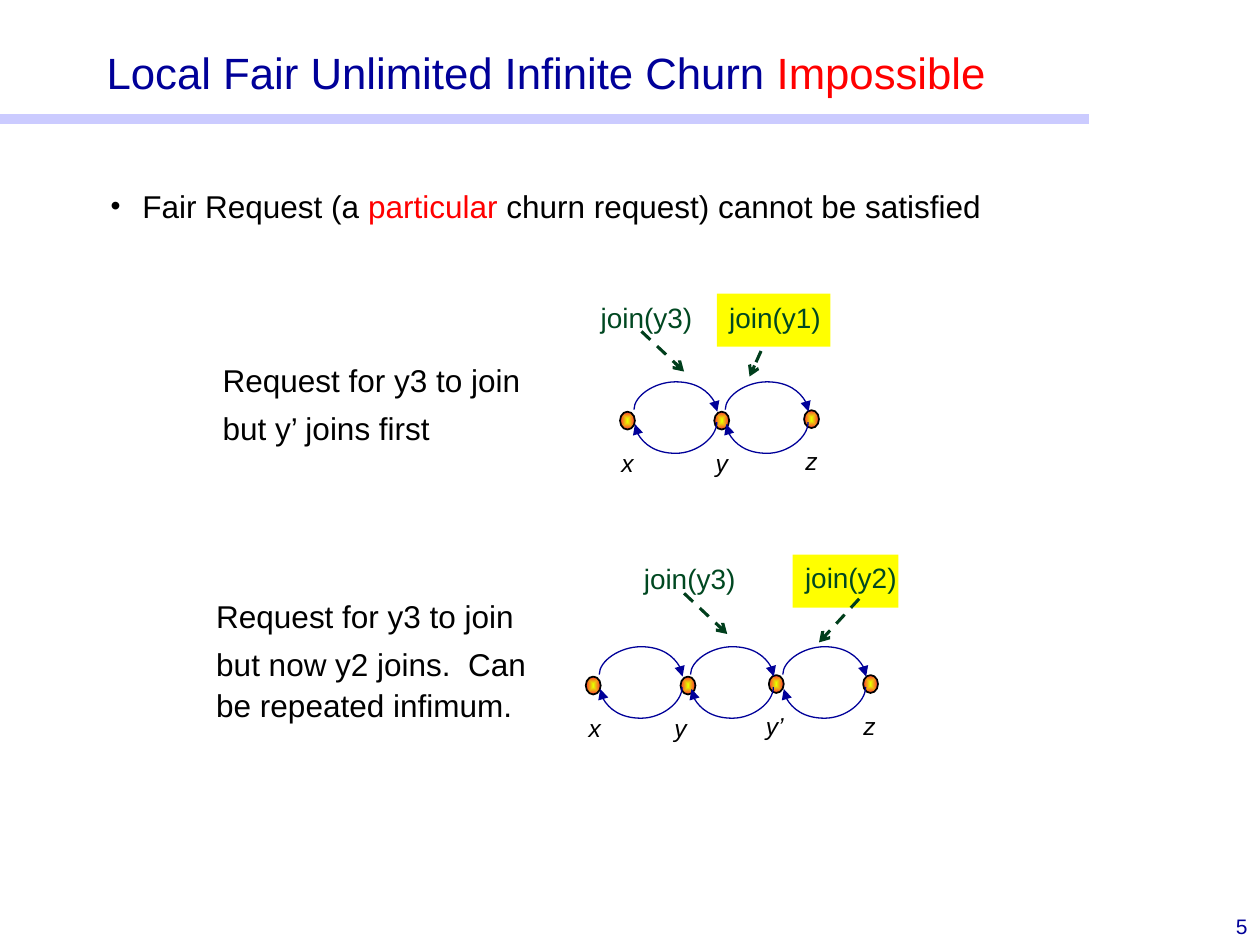
"""Build the slide on why local fair unlimited infinite churn is impossible."""
import pptx
import pptx.dml.color
import pptx.enum.dml
import pptx.enum.shapes
import pptx.enum.text
import pptx.oxml
import pptx.oxml.ns
import pptx.util

HUES = {"navy": "000099", "red": "FF0000", "black": "000000", "green": "004821",
        "dark": "003E1C", "yellow": "FFFF00", "lime": "E6FF00", "coral": "FF3333",
        "bar": "9999FF"}


def say(text, at, box=None, size=18, hue="black", red="", fill=None, align="LEFT",
        anchor="TOP", italic=False, wrap=True, lead=1.0, gap=0, inset=0.13, bullet=False):
    place = [pptx.util.Cm(n) for n in at]
    box = box or slide.shapes.add_textbox(*place)
    box.left, box.top, box.width, box.height = place
    if fill:
        box.fill.solid()
        box.fill.fore_color.rgb = pptx.dml.color.RGBColor.from_string(HUES[fill])
    frame = box.text_frame
    frame.auto_size = pptx.enum.text.MSO_AUTO_SIZE.NONE
    frame.word_wrap = wrap
    frame.vertical_anchor = pptx.enum.text.MSO_ANCHOR[anchor]
    frame.margin_left = frame.margin_right = pptx.util.Cm(0.25)
    frame.margin_top = pptx.util.Cm(inset)
    frame.margin_bottom = pptx.util.Cm(0.13)
    for i, line in enumerate(text.split("\n")):
        para = frame.add_paragraph() if i else frame.paragraphs[0]
        if bullet:
            props = para._p.get_or_add_pPr()
            props.set("marL", str(pptx.util.Cm(0.64)))
            props.set("indent", str(-pptx.util.Cm(0.64)))
            for mark in (f'buClr {ns}><a:srgbClr val="{HUES[hue]}"/></a:buClr',
                         f'buSzPct {ns} val="90000"/', f'buFont {ns} typeface="Arial"/',
                         f'buChar {ns} char="•"/'):
                props.append(pptx.oxml.parse_xml(f"<a:{mark}>"))
        para.alignment = pptx.enum.text.PP_ALIGN[align]
        para.line_spacing = lead
        if i:
            para.space_before = pptx.util.Pt(gap)
        parts = line.partition(red) if red else (line,)
        for part in filter(None, parts):
            run = para.add_run()
            run.text = part
            run.font.name = "Arial"
            run.font.size = pptx.util.Pt(size)
            run.font.italic = italic
            tint = "red" if part == red else hue
            run.font.color.rgb = pptx.dml.color.RGBColor.from_string(HUES[tint])


def link(kind, ends, hue, width, tip, dash=None):
    line = slide.shapes.add_connector(pptx.enum.shapes.MSO_CONNECTOR[kind],
                                      *[pptx.util.Cm(n) for n in ends])
    line.line.color.rgb = pptx.dml.color.RGBColor.from_string(HUES[hue])
    line.line.width = pptx.util.Pt(width)
    line.line.dash_style = dash
    line.line._get_or_add_ln().append(pptx.oxml.parse_xml(f"<a:{tip[0]} {ns} type='{tip[1]}'/>"))
    line._element.spPr.append(pptx.oxml.parse_xml(f"<a:effectLst {ns}/>"))
    return line


ns = pptx.oxml.ns.nsdecls("a")
deck = pptx.Presentation()
deck.slide_width, deck.slide_height = pptx.util.Cm(25.4), pptx.util.Cm(19.05)
slide = deck.slides.add_slide(deck.slide_layouts[5])

bar = slide.shapes.add_shape(pptx.enum.shapes.MSO_SHAPE.RECTANGLE, 0, pptx.util.Cm(2.3),
                             pptx.util.Cm(21.95), pptx.util.Cm(0.2))
bar.shadow.inherit = False
bar.line.fill.background()
bar.fill.solid()
bar.fill.fore_color.rgb = pptx.dml.color.RGBColor.from_string(HUES["bar"])
tone = bar._element.spPr.find(".//" + pptx.oxml.ns.qn("a:srgbClr"))
tone.append(pptx.oxml.parse_xml(f'<a:alpha {ns} val="50000"/>'))

say("Local Fair Unlimited Infinite Churn Impossible", (1.9, 0.76, 19.69, 1.35),
    box=slide.shapes.title, size=25, hue="navy", red="Impossible", anchor="BOTTOM", lead=1.1)
say("Fair Request (a particular churn request) cannot be satisfied",
    (1.98, 3.45, 20.68, 1.09), red="particular", lead=1.1, inset=0.25, bullet=True)
say("Request for y3 to join\nbut y’ joins first", (4.24, 6.96, 6.96, 3.05),
    lead=1.1, gap=3.6, inset=0.25)
say("Request for y3 to join\nbut now y2 joins.  Can be repeated infimum.",
    (4.11, 11.71, 7.24, 3.05), lead=1.1, gap=3.6, inset=0.25)
say("5", (24.13, 18.29, 1.27, 0.76), size=12, hue="navy", align="RIGHT")

hints = [(12.93, 6.68, 13.79, 7.49), (15.52, 6.68, 15.11, 7.59),
         (13.79, 11.96, 14.66, 12.78), (17.32, 12.07, 16.51, 12.95)]
calls = [("join(y3)", 11.86, 5.92, 1.8, None), ("join(y1)", 14.45, 5.92, 2.29, "yellow"),
         ("join(y3)", 12.73, 11.2, 1.8, None), ("join(y2)", 15.98, 11.18, 2.13, "yellow")]
for i in (0, 1):
    link("STRAIGHT", hints[i], "dark", 1.75, ("tailEnd", "arrow"), pptx.enum.dml.MSO_LINE.DASH)
for text, left, top, width, fill in calls:
    say(text, (left, top, width, 1.07), size=16, hue="green", fill=fill, wrap=False)
for i in (2, 3):
    link("STRAIGHT", hints[i], "dark", 1.75, ("tailEnd", "arrow"), pptx.enum.dml.MSO_LINE.DASH)

rings = [
    (8.48, [("x", 12.65, 12.65, 0), ("y", 14.55, 14.55, 0), ("z", 16.36, 16.36, -0.03)],
     [12.8, 14.64]),
    (13.82, [("x", 11.96, 11.99, 0), ("y", 13.87, 13.72, 0), ("y’", 15.65, 15.62, -0.03),
             ("z", 17.55, 17.53, -0.03)], [12.1, 13.94, 15.8]),
]
bends = [(0, 0.05, 1.65, 90, False, 1573200, "tailEnd"),
         (-0.02, -0.2, 1.68, 270, True, 1504100, "headEnd")]
thin = 0.04
for base, nodes, arcs in rings:
    for name, x, mid, lift in nodes:
        y = base + lift
        dot = slide.shapes.add_shape(
            pptx.enum.shapes.MSO_SHAPE.OVAL, pptx.util.Cm(x - 0.15),
            pptx.util.Cm(y - 0.18), pptx.util.Cm(0.3), pptx.util.Cm(0.36))
        dot.shadow.inherit = False
        dot.line.color.rgb = pptx.dml.color.RGBColor.from_string(HUES["black"])
        dot.line.width = pptx.util.Pt(1)
        dot.fill.gradient()
        for stop, hue, spot in zip(dot.fill.gradient_stops, ("lime", "coral"), (0, 1)):
            stop.color.rgb = pptx.dml.color.RGBColor.from_string(HUES[hue])
            stop.position = spot
        lin = dot._element.spPr.find(".//" + pptx.oxml.ns.qn("a:lin"))
        lin.getparent().replace(lin, pptx.oxml.parse_xml(
            f'<a:path {ns} path="shape"><a:fillToRect l="50000" t="50000" '
            'r="50000" b="50000"/></a:path>'))
        say(name, (mid - 0.38, y + 0.42, 0.76, 0.86), size=14, italic=True,
            align="CENTER", wrap=False)
    for left in arcs:
        for dx, dy, span, turn, flip, bow, end in bends:
            x, y = left + dx + span / 2, base + dy
            arc = link("CURVE", (x - thin / 2, y - span / 2, x + thin / 2, y + span / 2),
                       "navy", 0.75, (end, "triangle"))
            frame = arc._element.spPr.find(pptx.oxml.ns.qn("a:xfrm"))
            frame.set("rot", str(turn * 60000))
            if flip:
                frame.set("flipV", "1")
            guide = arc._element.spPr.find(".//" + pptx.oxml.ns.qn("a:avLst"))
            guide.append(pptx.oxml.parse_xml(f'<a:gd {ns} name="adj1" fmla="val {bow}"/>'))

deck.save("out.pptx")
